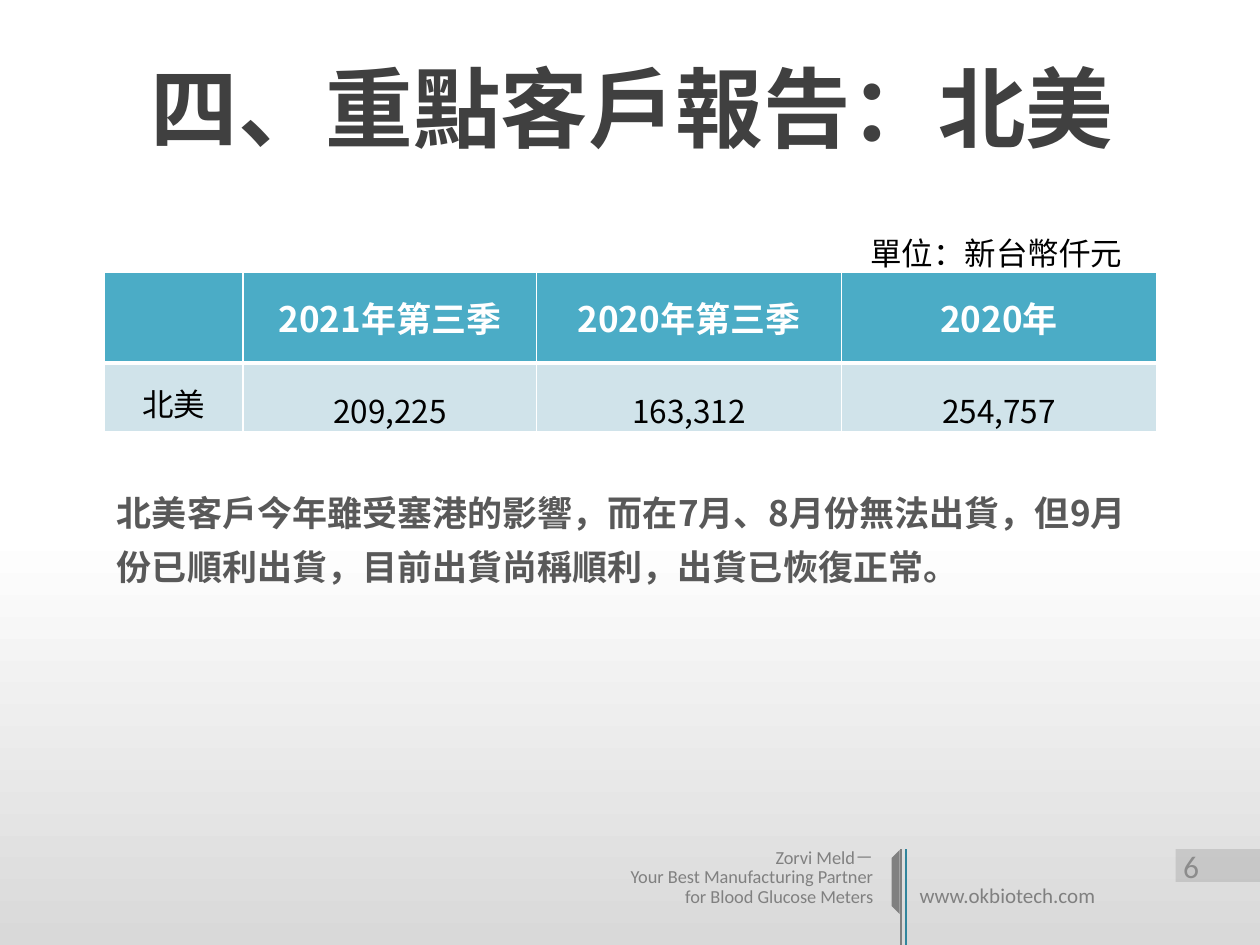
from pptx import Presentation
from pptx.dml.color import RGBColor
from pptx.enum.shapes import MSO_CONNECTOR, MSO_SHAPE
from pptx.enum.text import MSO_ANCHOR, PP_ALIGN
from pptx.oxml import parse_xml
from pptx.oxml.ns import nsdecls, qn
from pptx.util import Inches, Pt
from lxml.etree import SubElement

WHITE = RGBColor(0xFF, 0xFF, 0xFF)
BLACK = RGBColor(0x00, 0x00, 0x00)
LIGHT_GRAY = RGBColor(0xD9, 0xD9, 0xD9)
NUMBER_GRAY = RGBColor(0x8C, 0x8C, 0x8C)
GRAY = RGBColor(0x80, 0x80, 0x80)
BODY_GRAY = RGBColor(0x59, 0x59, 0x59)
TITLE_GRAY = RGBColor(0x40, 0x40, 0x40)
DARK_TEAL = RGBColor(0x31, 0x85, 0x9C)
HEADER_BLUE = RGBColor(0x4B, 0xAC, 0xC6)
ROW_BLUE = RGBColor(0xD0, 0xE3, 0xEA)
LATIN_FONT = "Calibri"
CHINESE_FONT = "Noto Sans CJK SC"
UNIT_FONT = "Noto Sans CJK TC"


def add_span(para, text, size, color, font=CHINESE_FONT, bold=False):
    span = para.add_run()
    span.text = text
    span.font.size = Pt(size)
    span.font.bold = bold
    span.font.color.rgb = color
    span.font.name = font
    SubElement(span.font._element, qn("a:ea")).set("typeface", font)


def add_box(left, top, width, height, wrap=True):
    box = page.shapes.add_textbox(Inches(left), Inches(top), Inches(width), Inches(height))
    box.text_frame.word_wrap = wrap
    return box.text_frame


deck = Presentation()
deck.slide_width = Inches(10)
deck.slide_height = Inches(7.5)
page = deck.slides.add_slide(deck.slide_layouts[6])

# Background: white, fading to gray in the lower part
background = page.background.fill
background.gradient()
background.gradient_angle = 270
for stop, (position, color) in zip(background.gradient_stops, [(0.56, WHITE), (1, LIGHT_GRAY)]):
    stop.position = position
    stop.color.rgb = color

# Footer divider: two lines and a slanted stripe
for x, color in [(7.15, GRAY), (7.19, DARK_TEAL)]:
    divider = page.shapes.add_connector(
        MSO_CONNECTOR.STRAIGHT, Inches(x), Inches(6.74), Inches(x), Inches(7.5))
    divider.line.color.rgb = color
    divider.line.width = Pt(1.5)
    SubElement(divider._element.spPr, qn("a:effectLst"))

stripe = page.shapes.add_shape(
    MSO_SHAPE.DIAGONAL_STRIPE, Inches(6.96), Inches(6.82), Inches(0.36), Inches(0.36))
stripe.adjustments[0] = 0.75
stripe.rotation = 225
stripe._element.spPr.find(qn("a:xfrm")).set("flipH", "1")
stripe.shadow.inherit = False
stripe.fill.solid()
stripe.fill.fore_color.rgb = GRAY
stripe.line.fill.background()

# Footer text
slogan = add_box(4.76, 6.69, 2.27, 0.56)
slogan_lines = ["Zorvi Meld－", "Your Best Manufacturing Partner", "for Blood Glucose Meters"]
for index, line in enumerate(slogan_lines):
    para = slogan.add_paragraph() if index else slogan.paragraphs[0]
    para.alignment = PP_ALIGN.RIGHT
    para.line_spacing = Pt(11)
    add_span(para, line, 10.5, GRAY, LATIN_FONT)

para = add_box(7.2, 7, 1.89, 0.26).paragraphs[0]
para.line_spacing = Pt(11)
add_span(para, "www.okbiotech.com", 12, GRAY, LATIN_FONT)

# Title
title = add_box(0.63, 0.22, 8.78, 1.25)
title.vertical_anchor = MSO_ANCHOR.MIDDLE
para = title.paragraphs[0]
para.alignment = PP_ALIGN.CENTER
add_span(para, "四、重點客戶報告：北美", 50, TITLE_GRAY, bold=True)

# Page number on a translucent tab
tab = page.shapes.add_shape(
    MSO_SHAPE.RECTANGLE, Inches(9.33), Inches(6.74), Inches(0.67), Inches(0.26))
tab.shadow.inherit = False
tab.fill.solid()
tab.fill.fore_color.rgb = GRAY
tab_color = tab._element.spPr.find(qn("a:solidFill"))[0]
SubElement(tab_color, qn("a:alpha")).set("val", "25000")
tab.line.fill.background()
frame = tab.text_frame
frame.margin_left = Inches(0.06)
frame.margin_top = frame.margin_right = frame.margin_bottom = 0
frame.vertical_anchor = MSO_ANCHOR.MIDDLE
para = frame.paragraphs[0]
para.alignment = PP_ALIGN.LEFT
add_span(para, "6", 18, NUMBER_GRAY, LATIN_FONT)

# Sales table
rows = [
    ["", "2021年第三季", "2020年第三季", "2020年"],
    ["北美", "209,225", "163,312", "254,757"],
]
table = page.shapes.add_table(
    2, 4, Inches(0.83), Inches(2.16), Inches(8.35), Inches(1.27)).table
for column, width in zip(table.columns, [1.1, 2.33, 2.42, 2.5]):
    column.width = Inches(width)
for row, height in zip(table.rows, [0.72, 0.55]):
    row.height = Inches(height)

for row_index, texts in enumerate(rows):
    header = row_index == 0
    for column_index, text in enumerate(texts):
        cell = table.cell(row_index, column_index)
        cell.vertical_anchor = MSO_ANCHOR.MIDDLE if header else MSO_ANCHOR.BOTTOM
        if not header and column_index:
            cell.margin_left = cell.margin_top = cell.margin_right = Inches(0.01)
            cell.margin_bottom = 0
        cell.fill.solid()
        cell.fill.fore_color.rgb = HEADER_BLUE if header else ROW_BLUE
        # White borders, thicker between the header and the figures
        thick_side = "B" if header else "T"
        for order, side in enumerate("LRTB"):
            weight = Pt(3 if side == thick_side else 1)
            border = parse_xml(
                f'<a:ln{side} {nsdecls("a")} w="{weight}"><a:solidFill>'
                f'<a:srgbClr val="{WHITE}"/></a:solidFill></a:ln{side}>')
            cell._tc.tcPr.insert(order, border)
        if text:
            para = cell.text_frame.paragraphs[0]
            para.alignment = PP_ALIGN.CENTER
            add_span(para, text, 20 if header else 18, WHITE if header else BLACK, bold=header)

# Unit note above the table
para = add_box(6.81, 1.81, 2.2, 0.6, wrap=False).paragraphs[0]
add_span(para, "單位：新台幣仟元", 18, BLACK, UNIT_FONT)

# Comment below the table
para = add_box(0.83, 3.75, 8.41, 1.42).paragraphs[0]
para.line_spacing = 1.3
add_span(
    para,
    "北美客戶今年雖受塞港的影響，而在7月、8月份無法出貨，但9月份已順利出貨，"
    "目前出貨尚稱順利，出貨已恢復正常。",
    20, BODY_GRAY, bold=True)

deck.save("out.pptx")
